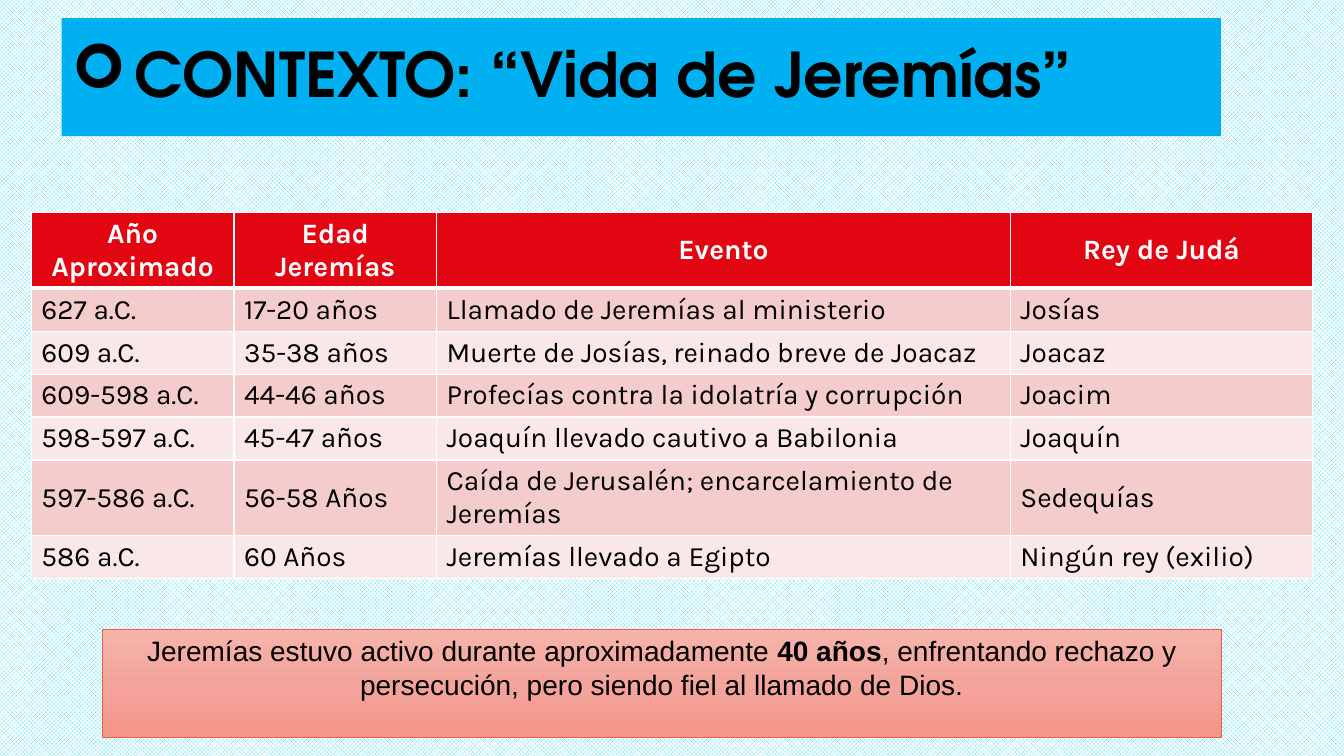
from copy import deepcopy

from lxml.etree import SubElement
from pptx import Presentation
from pptx.dml.color import RGBColor
from pptx.enum.dml import MSO_PATTERN
from pptx.enum.shapes import MSO_SHAPE
from pptx.enum.text import MSO_ANCHOR, MSO_AUTO_SIZE, PP_ALIGN
from pptx.oxml.ns import qn
from pptx.util import Inches, Pt

BLACK, WHITE = "000000", "FFFFFF"
HEADER_RED, BANDS = "E20613", ("F4CCCC", "FAE7E7")

HEADINGS = ("Año Aproximado", "Edad Jeremías", "Evento", "Rey de Judá")
LIFE = (
    ("627 a.C.", "17-20 años", "Llamado de Jeremías al ministerio", "Josías"),
    ("609 a.C.", "35-38 años", "Muerte de Josías, reinado breve de Joacaz", "Joacaz"),
    ("609-598 a.C.", "44-46 años", "Profecías contra la idolatría y corrupción", "Joacim"),
    ("598-597 a.C.", "45-47 años", "Joaquín llevado cautivo a Babilonia", "Joaquín"),
    ("597-586 a.C.", "56-58 Años", "Caída de Jerusalén; encarcelamiento de Jeremías", "Sedequías"),
    ("586 a.C.", "60 Años", "Jeremías llevado a Egipto", "Ningún rey (exilio)"),
)


def rgb(code):
    return RGBColor.from_string(code)


def write(paragraph, text, font="Arial", size=20, color=BLACK, bold=False, align=PP_ALIGN.LEFT):
    paragraph.alignment = align
    run = paragraph.add_run()
    run.text = text
    run.font.name, run.font.size, run.font.bold = font, Pt(size), bold
    run.font.color.rgb = rgb(color)


def border(cell, side, points):
    line = SubElement(cell._tc.get_or_add_tcPr(), qn(f"a:ln{side}"), w=str(Pt(points)))
    SubElement(SubElement(line, qn("a:solidFill")), qn("a:srgbClr"), val=WHITE)


class Deck:
    """Holds the style and the current slide; lengths are percentages of the slide."""

    def __init__(self):
        self.show = Presentation()
        self.show.slide_width, self.show.slide_height = Inches(13.33), Inches(7.5)
        self.slide = self.show.slides.add_slide(self.show.slide_layouts[5])

    def across(self, share):
        return int(self.show.slide_width * share / 100)

    def down(self, share):
        return int(self.show.slide_height * share / 100)

    def area(self, left, top, width, height):
        return self.across(left), self.down(top), self.across(width), self.down(height)

    def background(self, fore, back):
        fill = self.slide.background.fill
        fill.patterned()
        fill.pattern = MSO_PATTERN.TRELLIS
        fill.fore_color.rgb, fill.back_color.rgb = rgb(fore), rgb(back)

    def title(self, text, area, color, bullet):
        heading = self.slide.shapes.title
        heading.left, heading.top, heading.width, heading.height = self.area(*area)
        heading.fill.solid()
        heading.fill.fore_color.rgb = rgb(color)
        frame = heading.text_frame
        frame.auto_size, frame.vertical_anchor = MSO_AUTO_SIZE.NONE, MSO_ANCHOR.MIDDLE
        paragraph = frame.paragraphs[0]
        paragraph.line_spacing = 0.9
        write(paragraph, text, font="TeX Gyre Adventor", size=44, bold=True)
        properties = paragraph._p.get_or_add_pPr()
        properties.set("marL", str(Inches(0.62)))
        properties.set("indent", str(Inches(-0.62)))
        SubElement(properties, qn("a:buFont"), typeface="Wingdings")
        SubElement(properties, qn("a:buChar"), char=bullet)

    def table(self, headings, records, area, widths):
        rows = (headings, *records)
        table = self.slide.shapes.add_table(len(rows), len(headings), *self.area(*area)).table
        for column, width in zip(table.columns, widths):
            column.width = self.across(width)
        for r, row in enumerate(rows):
            for c, text in enumerate(row):
                self.cell(table.cell(r, c), text, r)

    def cell(self, cell, text, row):
        header = row == 0
        # Borders come before the fill in the cell's properties
        for side in "LRTB":
            border(cell, side, 3 if (row, side) in ((0, "B"), (1, "T")) else 1)
        cell.fill.solid()
        cell.fill.fore_color.rgb = rgb(HEADER_RED if header else BANDS[(row - 1) % 2])
        cell.vertical_anchor = MSO_ANCHOR.MIDDLE
        write(cell.text_frame.paragraphs[0], text, font="Karla", bold=header,
              color=WHITE if header else BLACK,
              align=PP_ALIGN.CENTER if header else PP_ALIGN.LEFT)

    def note(self, parts, area, shades, outline):
        box = self.slide.shapes.add_shape(MSO_SHAPE.RECTANGLE, *self.area(*area))
        box.shadow.inherit = False
        box.line.color.rgb, box.line.width = rgb(outline), Pt(0.5)
        # Vertical gradient with a middle stop
        box.fill.gradient()
        box.fill.gradient_angle = 270
        first = box._element.spPr.find(".//" + qn("a:gs"))
        first.addnext(deepcopy(first))
        for i, (stop, shade) in enumerate(zip(box.fill.gradient_stops, shades)):
            stop.position = i / (len(shades) - 1)
            stop.color.rgb = rgb(shade)
        frame = box.text_frame
        frame.word_wrap, frame.vertical_anchor = True, MSO_ANCHOR.TOP
        for text, bold in parts:
            write(frame.paragraphs[0], text, bold=bold, align=PP_ALIGN.CENTER)


def main():
    deck = Deck()
    deck.background("5CDDF1", WHITE)

    # Heading band
    deck.title("CONTEXTO: “Vida de Jeremías”", (4.58, 2.4, 86.27, 15.6), "00B0F0", "➢")

    # Chronology
    deck.table(HEADINGS, LIFE, (2.33, 28.13, 95.35, 38.3), (15.08, 15.08, 42.69, 22.5))

    # Closing remark
    deck.note((("Jeremías estuvo activo durante aproximadamente ", False),
               ("40 años", True),
               (", enfrentando rechazo y persecución, pero siendo fiel al llamado de Dios.", False)),
              (7.65, 83.2, 83.2, 14.4), ("F6B3AB", "F3A59C", "F6958A"), "EB6047")

    deck.show.save("out.pptx")


if __name__ == "__main__":
    main()
